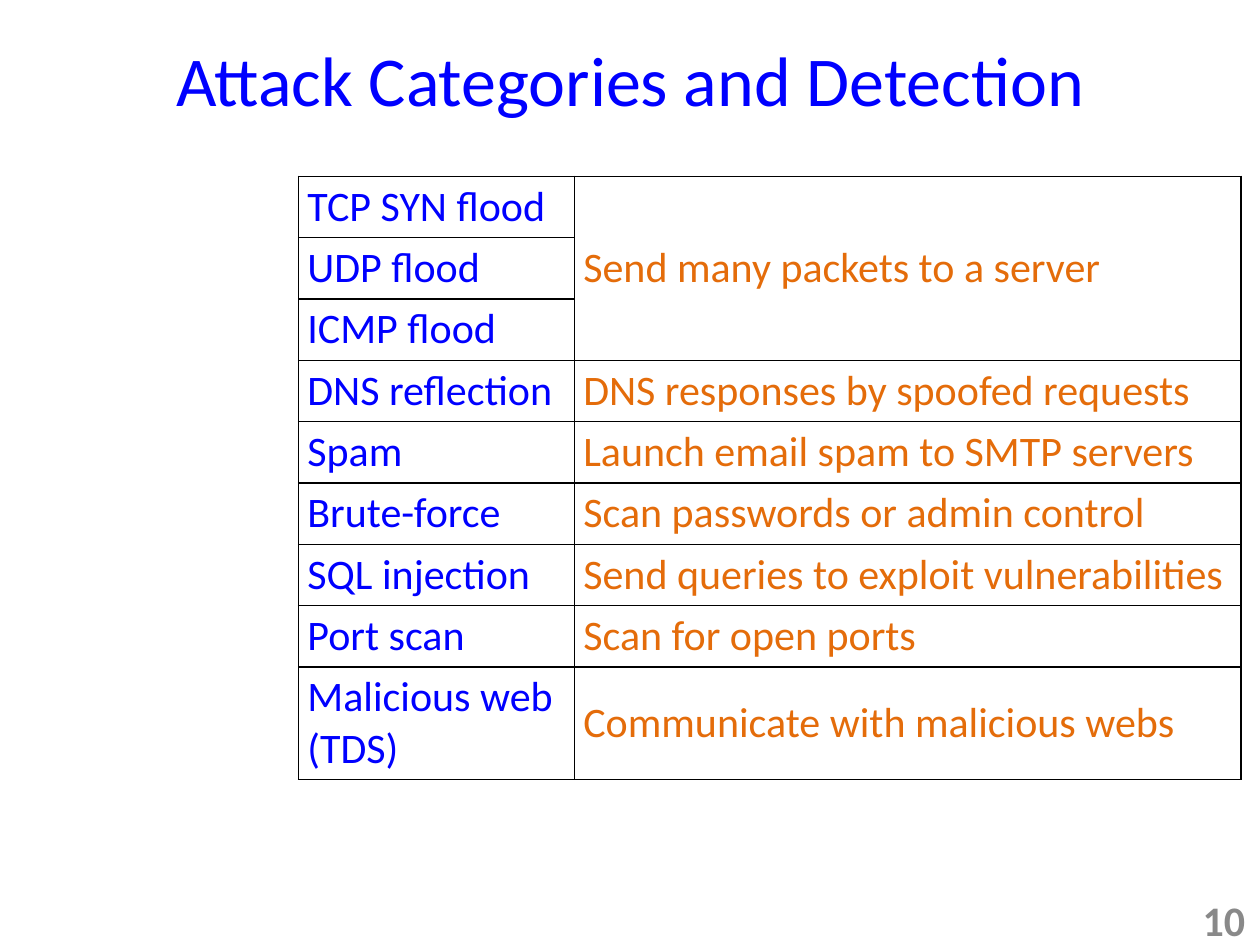
from pptx import Presentation
from pptx.dml.color import RGBColor
from pptx.enum.text import MSO_ANCHOR, PP_ALIGN
from pptx.oxml import parse_xml
from pptx.oxml.ns import nsdecls
from pptx.util import Inches, Pt

TITLE = "Attack Categories and Detection"
SLIDE_NUMBER = "10"
# Attack names (one tuple item per paragraph) and how each is detected;
# None continues the detection cell above.
ATTACKS = [
    (("TCP SYN flood",), "Send many packets to a server"),
    (("UDP flood",), None),
    (("ICMP flood",), None),
    (("DNS reflection",), "DNS responses by spoofed requests"),
    (("Spam",), "Launch email spam to SMTP servers"),
    (("Brute-force",), "Scan passwords or admin control"),
    (("SQL injection",), "Send queries to exploit vulnerabilities"),
    (("Port scan",), "Scan for open ports"),
    (("Malicious web", "(TDS)"), "Communicate with malicious webs"),
]
COLUMN_WIDTHS = (2.19, 5.29)
ROW_HEIGHTS = {1: 0.38, 2: 0.68}  # by number of paragraphs
TABLE_HEIGHT = 4.67
FONT = "Calibri"
BLUE, ORANGE, GRAY, BLACK = "0000FF", "E46C0A", "898989", "000000"


def write(frame, lines, color, size=24, bold=False, align=PP_ALIGN.LEFT):
    for index, line in enumerate(lines):
        paragraph = frame.add_paragraph() if index else frame.paragraphs[0]
        paragraph.alignment = align
        run = paragraph.add_run()
        run.text = line
        run.font.name = FONT
        run.font.size = Pt(size)
        run.font.bold = bold
        run.font.color.rgb = RGBColor.from_string(color)


def format_cell(cell):
    """Set the margins, remove the fill and draw thin borders on all sides."""
    cell.margin_left = cell.margin_right = Inches(0.07)
    cell.margin_top = cell.margin_bottom = Inches(0.04)
    cell.fill.background()
    properties = cell._tc.get_or_add_tcPr()
    for index, side in enumerate(("lnL", "lnR", "lnT", "lnB")):
        properties.insert(index, parse_xml(
            f'<a:{side} {nsdecls("a")} w="{Pt(1)}"><a:solidFill>'
            f'<a:srgbClr val="{BLACK}"/></a:solidFill></a:{side}>'))


def add_attack_table(slide):
    graphic_frame = slide.shapes.add_table(
        len(ATTACKS), len(COLUMN_WIDTHS), Inches(2.37), Inches(1.4),
        Inches(sum(COLUMN_WIDTHS)), Inches(TABLE_HEIGHT))
    table = graphic_frame.table
    table.first_row = table.horz_banding = False
    for column, width in zip(table.columns, COLUMN_WIDTHS):
        column.width = Inches(width)
    for index, (names, detection) in enumerate(ATTACKS):
        table.rows[index].height = Inches(ROW_HEIGHTS[len(names)])
        name_cell, detection_cell = table.cell(index, 0), table.cell(index, 1)
        format_cell(name_cell)
        format_cell(detection_cell)
        write(name_cell.text_frame, names, BLUE)
        if detection:
            first = detection_cell
            first.vertical_anchor = MSO_ANCHOR.MIDDLE
            write(first.text_frame, [detection], ORANGE)
            last = index
            while last + 1 < len(ATTACKS) and ATTACKS[last + 1][1] is None:
                last += 1
            if last > index:
                first.merge(table.cell(last, 1))
    graphic_frame.height = Inches(TABLE_HEIGHT)


def main():
    presentation = Presentation()
    presentation.slide_width, presentation.slide_height = Inches(10), Inches(7.5)
    slide = presentation.slides.add_slide(presentation.slide_layouts[5])

    title = slide.shapes.title
    title.left, title.top = Inches(0), Inches(0)
    title.width, title.height = Inches(10), Inches(1.25)
    title.text_frame.vertical_anchor = MSO_ANCHOR.MIDDLE
    write(title.text_frame, [TITLE], BLUE, size=40, align=PP_ALIGN.CENTER)

    add_attack_table(slide)

    number = slide.shapes.add_textbox(
        Inches(7.65), Inches(7.1), Inches(2.33), Inches(0.4)).text_frame
    number.word_wrap = True
    number.vertical_anchor = MSO_ANCHOR.MIDDLE
    write(number, [SLIDE_NUMBER], GRAY, bold=True, align=PP_ALIGN.RIGHT)

    presentation.save("out.pptx")


if __name__ == "__main__":
    main()
